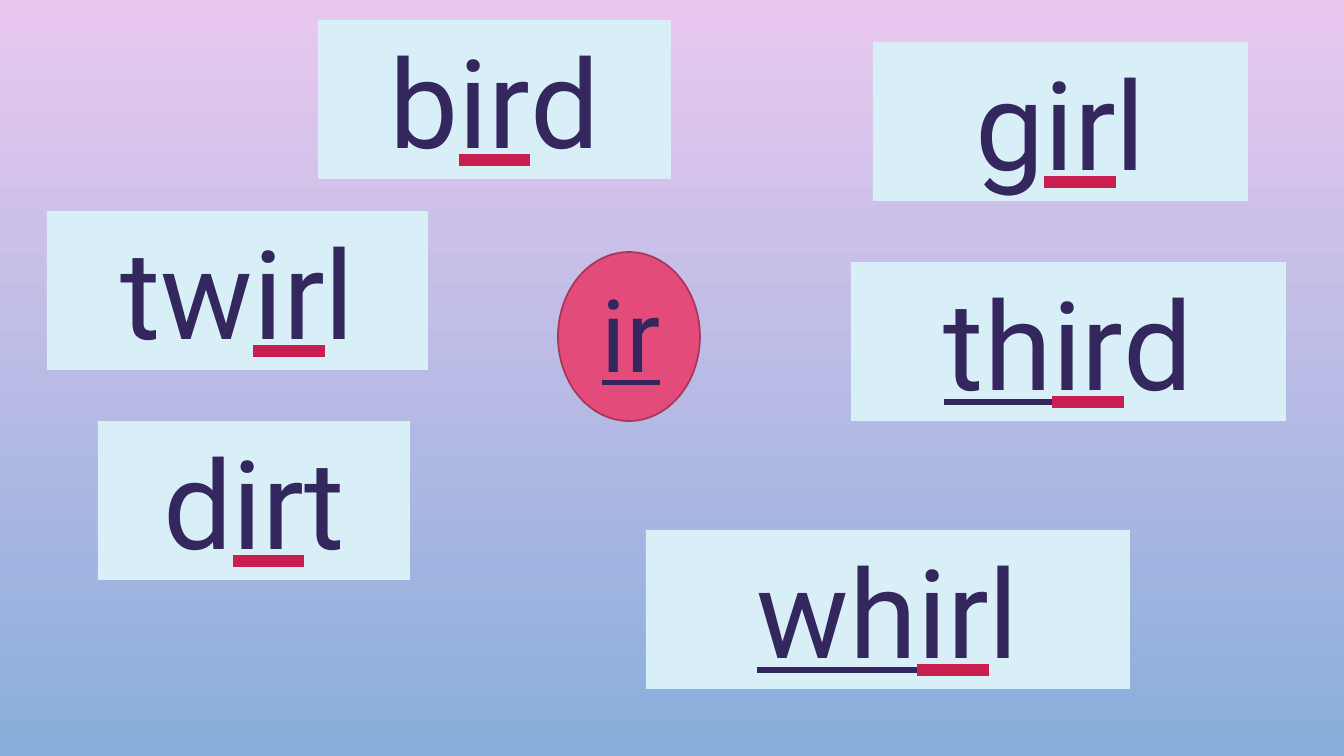
from dataclasses import dataclass

from lxml.etree import SubElement
from pptx import Presentation
from pptx.dml.color import RGBColor
from pptx.enum.shapes import MSO_SHAPE
from pptx.enum.text import MSO_ANCHOR, MSO_AUTO_SIZE, MSO_UNDERLINE, PP_ALIGN
from pptx.oxml.ns import qn
from pptx.shapes.autoshape import Shape
from pptx.slide import Slide
from pptx.util import Emu, Pt

SLIDE_WIDTH, SLIDE_HEIGHT = 1344, 756
EMU_PER_PX = 12192000 / SLIDE_WIDTH


@dataclass(frozen=True)
class Theme:
    font: str = "Roboto"
    sky_top: str = "E9C8EF"
    sky_bottom: str = "89AEDB"
    card: str = "D9EFF7"
    ink: str = "33275E"
    sound_bar: str = "C81E50"
    badge: str = "E34B7A"
    badge_edge: str = "A8375A"
    word_size: int = 88
    sound_size: int = 72
    badge_edge_width: float = 1.25


@dataclass(frozen=True)
class Box:
    left: int
    top: int
    width: int
    height: int


@dataclass(frozen=True)
class WordCard:
    """A word split around its sound; digraph letters are underlined too."""
    box: Box
    start: str
    end: str
    digraph: bool = False


THEME = Theme()
SOUND = "ir"
CARD_HEIGHT = 159
BADGE = Box(558, 252, 142, 169)
BADGE_TEXT = Box(535, 267, 192, 132)
CARDS = [
    WordCard(Box(873, 42, 375, CARD_HEIGHT), "g", "l"),
    WordCard(Box(318, 20, 353, CARD_HEIGHT), "b", "d"),
    WordCard(Box(851, 262, 435, CARD_HEIGHT), "th", "d", digraph=True),
    WordCard(Box(646, 530, 484, CARD_HEIGHT), "wh", "l", digraph=True),
    WordCard(Box(47, 211, 381, CARD_HEIGHT), "tw", "l"),
    WordCard(Box(98, 421, 312, CARD_HEIGHT), "d", "t"),
]


def px(length: int) -> Emu:
    return Emu(round(length * EMU_PER_PX))


def place(box: Box) -> tuple[Emu, Emu, Emu, Emu]:
    return px(box.left), px(box.top), px(box.width), px(box.height)


def rgb(color: str) -> RGBColor:
    return RGBColor.from_string(color)


def paint_background(slide: Slide) -> None:
    fill = slide.background.fill
    fill.gradient()
    fill.gradient_angle = 270
    for stop, color in zip(fill.gradient_stops, (THEME.sky_top, THEME.sky_bottom)):
        stop.color.rgb = rgb(color)
    fill.gradient_stops[0].position = 0
    fill.gradient_stops[1].position = 1


def add_filled(slide: Slide, preset: MSO_SHAPE, box: Box, color: str) -> Shape:
    shape = slide.shapes.add_shape(preset, *place(box))
    shape.shadow.inherit = False
    shape.fill.solid()
    shape.fill.fore_color.rgb = rgb(color)
    shape.line.fill.background()
    return shape


def start_word(shape: Shape, size: int):
    """Set up the shape's text and return its one paragraph."""
    frame = shape.text_frame
    frame.word_wrap = True
    frame.auto_size = MSO_AUTO_SIZE.SHAPE_TO_FIT_TEXT
    frame.vertical_anchor = MSO_ANCHOR.TOP
    word = frame.paragraphs[0]
    word.alignment = PP_ALIGN.CENTER
    word.font.name = THEME.font
    word.font.size = Pt(size)
    word.font.color.rgb = rgb(THEME.ink)
    return word


def add_letters(word, letters: str, underline: MSO_UNDERLINE | None = None):
    run = word.add_run()
    run.text = letters
    run.font.underline = underline
    return run


def add_card(slide: Slide, card: WordCard) -> None:
    shape = add_filled(slide, MSO_SHAPE.RECTANGLE, card.box, THEME.card)
    word = start_word(shape, THEME.word_size)
    add_letters(word, card.start, MSO_UNDERLINE.SINGLE_LINE if card.digraph else None)
    sound = add_letters(word, SOUND, MSO_UNDERLINE.HEAVY_LINE)
    bar = SubElement(sound.font._element, qn("a:uFill"))
    SubElement(SubElement(bar, qn("a:solidFill")), qn("a:srgbClr"), val=THEME.sound_bar)
    add_letters(word, card.end)


def add_badge(slide: Slide) -> None:
    badge = add_filled(slide, MSO_SHAPE.OVAL, BADGE, THEME.badge)
    badge.line.color.rgb = rgb(THEME.badge_edge)
    badge.line.width = Pt(THEME.badge_edge_width)
    label = slide.shapes.add_textbox(*place(BADGE_TEXT))
    add_letters(start_word(label, THEME.sound_size), SOUND, MSO_UNDERLINE.SINGLE_LINE)


def main() -> None:
    deck = Presentation()
    deck.slide_width, deck.slide_height = px(SLIDE_WIDTH), px(SLIDE_HEIGHT)
    slide = deck.slides.add_slide(deck.slide_layouts[6])
    paint_background(slide)
    add_badge(slide)
    for card in CARDS:
        add_card(slide, card)
    deck.save("out.pptx")


if __name__ == "__main__":
    main()
